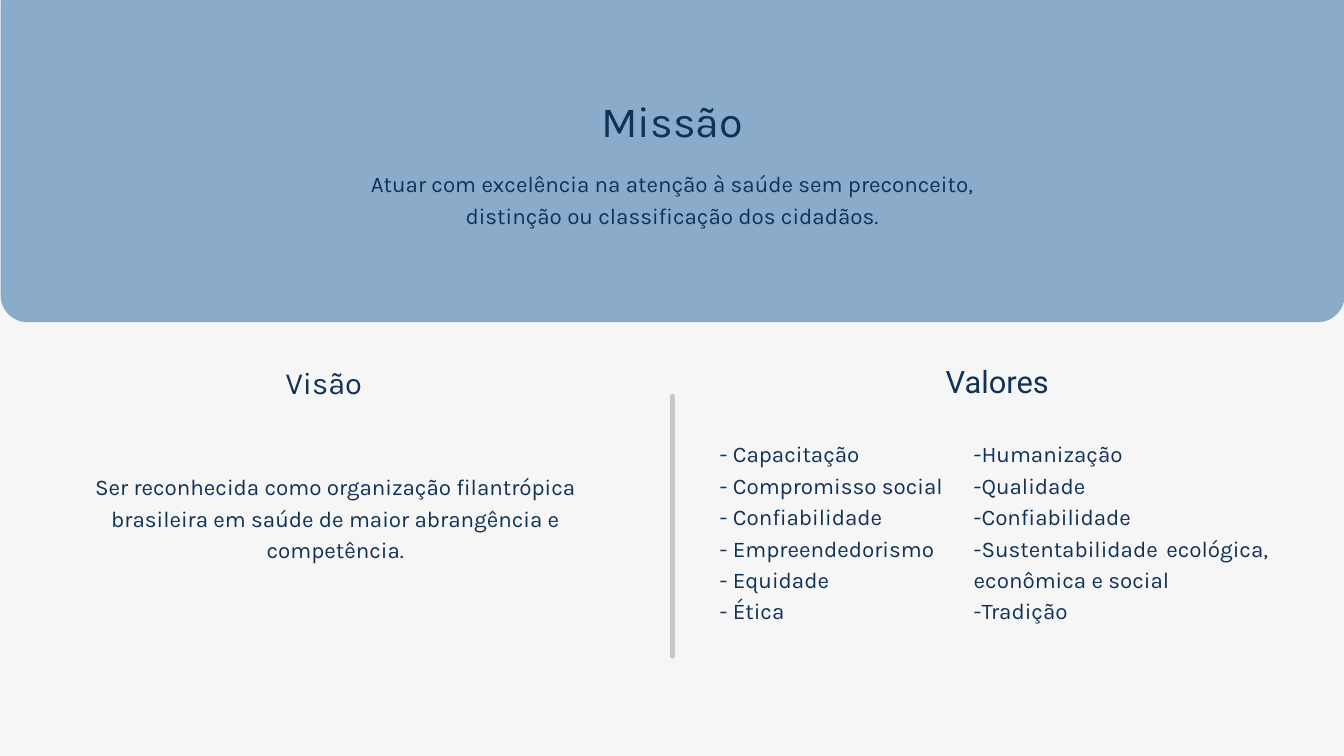
from lxml import etree
from pptx import Presentation
from pptx import util as u
from pptx.dml.color import RGBColor
from pptx.enum import shapes, text
from pptx.oxml import ns

COLORS = {"background": "F6F6F6", "banner": "8AABCA", "text": "0F3256", "divider": "C8C8C8"}
ALIGN = text.PP_ALIGN
TITLE = {"size": u.Pt(46.2), "name": "Karla"}
HEADING = {"size": u.Pt(33), "name": "Karla"}
BODY = {"size": u.Pt(24), "name": "Karla"}
FRAME = {
    "margin_left": 0, "margin_top": 0, "margin_right": 0, "margin_bottom": 0,
    "word_wrap": True, "auto_size": text.MSO_AUTO_SIZE.NONE,
    "vertical_anchor": text.MSO_ANCHOR.TOP,
}


def write(shape, lines, font, align):
    frame = shape.text_frame
    for name, value in FRAME.items():
        setattr(frame, name, value)
    frame.text = "\n".join(lines)
    layout = {
        "alignment": align, "line_spacing": u.Pt(round(font["size"].pt * 1.4, 1)),
        "space_before": u.Pt(0), "space_after": u.Pt(0),
    }
    for paragraph in frame.paragraphs:
        for name, value in layout.items():
            setattr(paragraph, name, value)
        for run in paragraph.runs:
            for name, value in font.items():
                setattr(run.font, name, value)
            run.font.color.rgb = RGBColor.from_string(COLORS["text"])


presentation = Presentation()
presentation.slide_width, presentation.slide_height = u.Pt(1440), u.Pt(810)
slide = presentation.slides.add_slide(presentation.slide_layouts[5])
slide.background.fill.solid()
slide.background.fill.fore_color.rgb = RGBColor.from_string(COLORS["background"])

banner = slide.shapes.add_shape(
    shapes.MSO_SHAPE.ROUNDED_RECTANGLE, u.Pt(0.7), u.Pt(-25.2), u.Pt(1440), u.Pt(370.4))
banner.adjustments[0] = 28.8 / 370.4
banner.shadow.inherit = False
banner.fill.solid()
banner.fill.fore_color.rgb = RGBColor.from_string(COLORS["banner"])
banner.line.fill.background()

title = slide.shapes.title
title.element.addprevious(banner.element)
title.left, title.top, title.width, title.height = [u.Pt(n) for n in (347.8, 91.4, 744.5, 60.5)]
write(title, ["Missão"], TITLE, ALIGN.CENTER)

divider = slide.shapes.add_connector(
    shapes.MSO_CONNECTOR.STRAIGHT, u.Pt(720.7), u.Pt(424.8), u.Pt(720.7), u.Pt(702.7))
divider.line.width = u.Pt(6)
divider.line.color.rgb = RGBColor.from_string(COLORS["divider"])
divider.line.fill.solid()
divider.line.color.rgb = RGBColor.from_string(COLORS["divider"])
properties = divider.element.spPr
properties.find(ns.qn("a:ln")).set("cap", "rnd")
etree.SubElement(properties, ns.qn("a:effectLst"))

texts = [
    ((347.8, 177.8, 744.5, 63.4), BODY, ALIGN.CENTER,
     ["Atuar com excelência na atenção à saúde sem preconceito, "
      "distinção ou classificação dos cidadãos."]),
    ((80.6, 383, 532.8, 45), HEADING, ALIGN.CENTER, ["Visão"]),
    ((80.6, 502.6, 557.3, 97.2), BODY, ALIGN.CENTER,
     ["Ser reconhecida como organização filantrópica brasileira em saúde "
      "de maior abrangência e competência."]),
    ((802.1, 382.3, 532.8, 45), {**HEADING, "name": "Roboto"}, ALIGN.CENTER, ["Valores"]),
    ((771.1, 467.3, 252.7, 196.6), BODY, ALIGN.JUSTIFY,
     ["- Capacitação", "- Compromisso social", "- Confiabilidade",
      "- Empreendedorismo", "- Equidade", "- Ética"]),
    ((1043.3, 467.3, 315.4, 196.6), BODY, ALIGN.JUSTIFY,
     ["-Humanização", "-Qualidade", "-Confiabilidade",
      "-Sustentabilidade ecológica, econômica e social", "-Tradição"]),
]
for box, font, align, lines in texts:
    write(slide.shapes.add_textbox(*[u.Pt(n) for n in box]), lines, font, align)

presentation.save("out.pptx")
